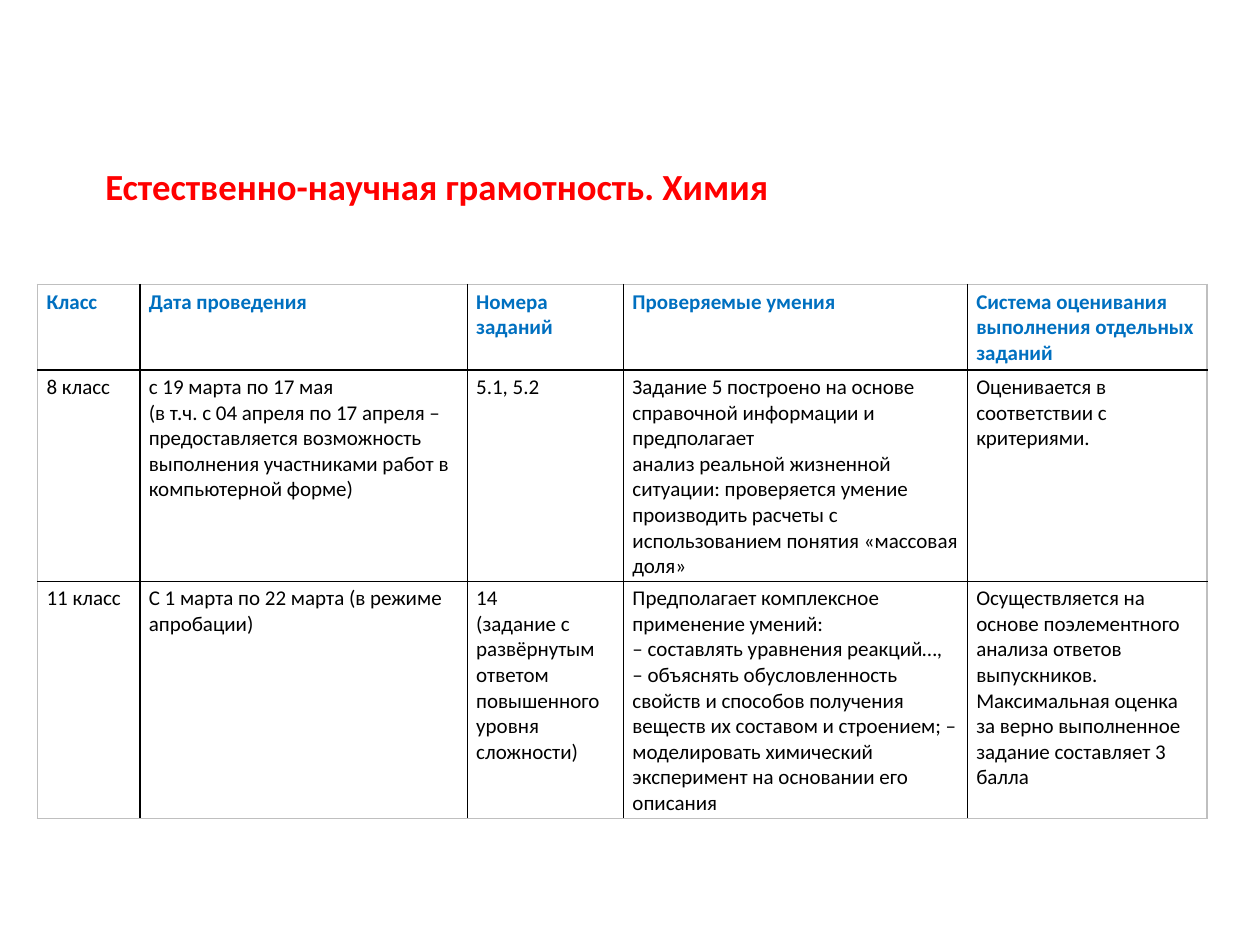
from lxml import etree
from pptx import Presentation, util as u
from pptx.dml.color import RGBColor
from pptx.enum import text
from pptx.oxml.ns import qn

COLORS = {"title": "FF0000", "header": "0070C0", "body": "000000",
          "inner": "000000", "outer": "BFBFBF", "cell": "FFFFFF"}

COLUMN_WIDTHS = [2.06, 6.6, 3.15, 6.93, 4.83]
ROW_HEIGHTS = [1.72, 4.26, 4.78]
ROWS = [
    ["Класс", "Дата проведения", "Номера заданий", "Проверяемые умения",
     "Система оценивания выполнения отдельных заданий"],
    ["8 класс",
     "с 19 марта по 17 мая \v(в т.ч. с 04 апреля по 17 апреля – предоставляется "
     "возможность выполнения участниками работ в компьютерной форме)",
     "5.1, 5.2",
     "Задание 5 построено на основе справочной информации и предполагает\n"
     "анализ реальной жизненной ситуации: проверяется умение производить расчеты "
     "с использованием понятия «массовая доля»",
     "Оценивается в\nсоответствии с критериями."],
    ["11 класс",
     "С 1 марта по 22 марта (в режиме апробации)",
     "14 \v(задание с развёрнутым ответом повышенного уровня сложности)",
     "Предполагает комплексное применение умений: \v– составлять уравнения реакций…,"
     "\v– объяснять обусловленность свойств и способов получения веществ их составом "
     "и строением; – моделировать химический эксперимент на основании его описания",
     "Осуществляется на основе поэлементного анализа ответов выпускников. "
     "Максимальная оценка за верно выполненное задание составляет 3 балла"],
]


class SlideBuilder:
    """Holds the text style and the current slide, and adds elements to it."""

    def __init__(self, slide, font_name="Calibri"):
        self.slide = slide
        self.font_name = font_name

    def style(self, frame, size, color, bold):
        for paragraph in frame.paragraphs:
            font = paragraph.font
            font.name, font.size, font.bold = self.font_name, u.Pt(size), bold
            font.color.rgb = RGBColor.from_string(COLORS[color])

    def title(self, words, left, top, width, height):
        box = self.slide.shapes.add_textbox(u.Cm(left), u.Cm(top), u.Cm(width), u.Cm(height))
        frame = box.text_frame
        frame.word_wrap = True
        frame.text = words
        frame.paragraphs[0].alignment = text.PP_ALIGN.CENTER
        self.style(frame, 21, "title", True)

    def borders(self, cell, edges):
        properties = cell._tc.get_or_add_tcPr()
        for index, (side, is_outer) in enumerate(edges.items()):
            line = etree.Element(qn(f"a:ln{side}"), w=str(u.Pt(1)))
            fill = etree.SubElement(line, qn("a:solidFill"))
            color = COLORS["outer" if is_outer else "inner"]
            etree.SubElement(fill, qn("a:srgbClr"), val=color)
            properties.insert(index, line)

    def table(self, rows, left, top, widths, heights):
        last_row, last_column = len(heights) - 1, len(widths) - 1
        table = self.slide.shapes.add_table(
            len(heights), len(widths), u.Cm(left), u.Cm(top),
            u.Cm(sum(widths)), u.Cm(sum(heights))).table
        table.first_row = table.horz_banding = False
        for column, width in zip(table.columns, widths):
            column.width = u.Cm(width)
        for r, (row, height) in enumerate(zip(rows, heights)):
            table.rows[r].height = u.Cm(height)
            for c, words in enumerate(row):
                cell = table.cell(r, c)
                cell.margin_left = cell.margin_right = u.Cm(0.18)
                cell.margin_top = cell.margin_bottom = u.Cm(0.09)
                cell.fill.solid()
                cell.fill.fore_color.rgb = RGBColor.from_string(COLORS["cell"])
                cell.text_frame.text = words
                self.style(cell.text_frame, 12, "body" if r else "header", r == 0)
                self.borders(cell, {"L": c == 0, "R": c == last_column,
                                    "T": r == 0, "B": r == last_row})


def main():
    presentation = Presentation()
    presentation.slide_width, presentation.slide_height = u.Cm(25.4), u.Cm(19.05)
    builder = SlideBuilder(presentation.slides.add_slide(presentation.slide_layouts[6]))
    builder.title("Естественно-научная грамотность. Химия", 0.4, 3.18, 16.82, 1.72)
    builder.table(ROWS, 0.76, 5.74, COLUMN_WIDTHS, ROW_HEIGHTS)
    presentation.save("out.pptx")


if __name__ == "__main__":
    main()
